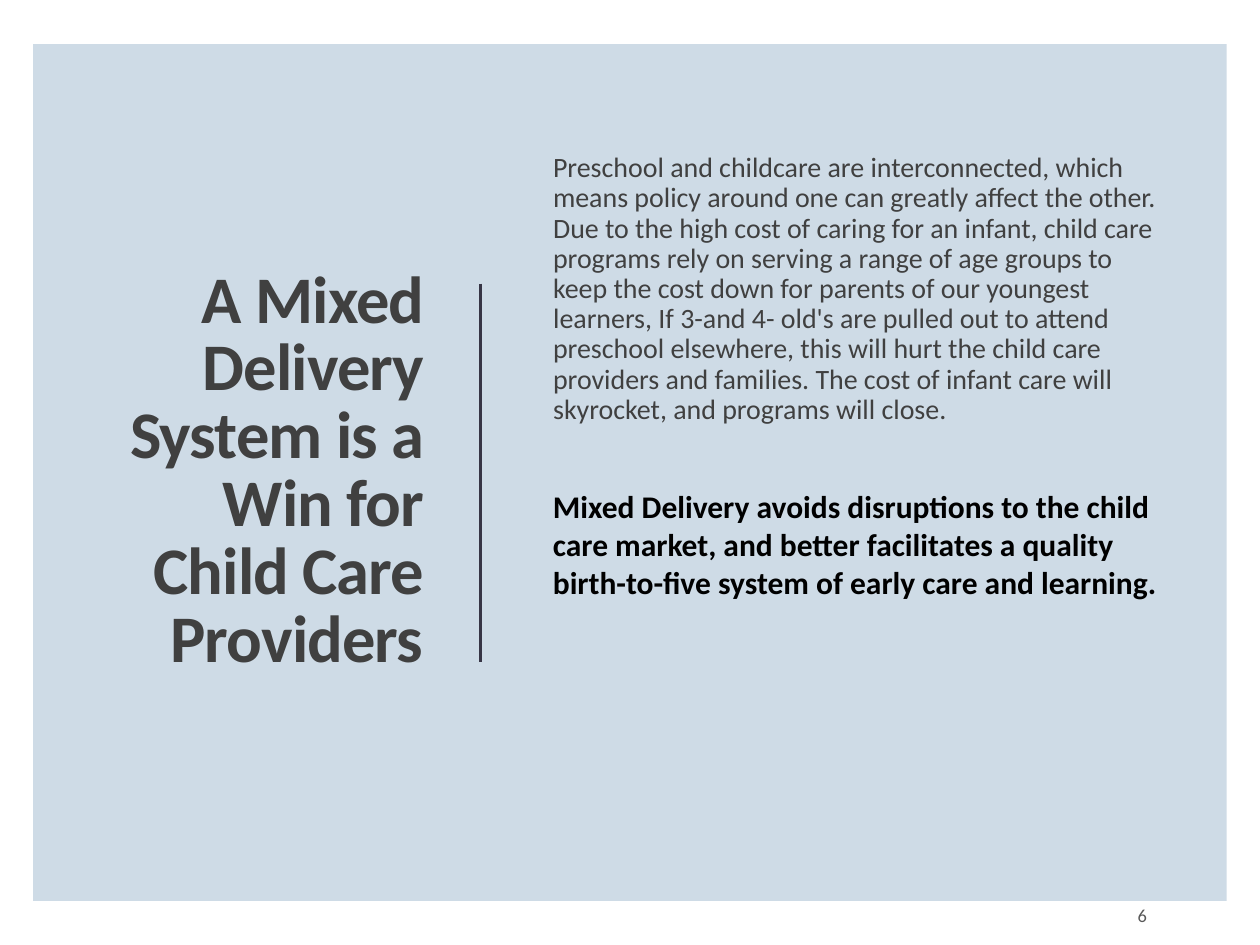
from lxml import etree
from pptx import Presentation
from pptx.dml.color import RGBColor
from pptx.enum.shapes import MSO_CONNECTOR, MSO_SHAPE
from pptx.enum.text import MSO_ANCHOR, PP_ALIGN
from pptx.oxml.ns import qn
from pptx.util import Pt

RECTANGLE = MSO_SHAPE.RECTANGLE
STRAIGHT = MSO_CONNECTOR.STRAIGHT
TOP, MIDDLE = MSO_ANCHOR.TOP, MSO_ANCHOR.MIDDLE
LEFT, RIGHT = PP_ALIGN.LEFT, PP_ALIGN.RIGHT
FONT = "Calibri"
COLORS = {
    "panel": "CEDBE6",
    "divider": "373545",
    "text": "404040",
    "number": "595959",
    "emphasis": "000000",
}

presentation = Presentation()
presentation.slide_width, presentation.slide_height = Pt(720), Pt(540)
slide = presentation.slides.add_slide(presentation.slide_layouts[6])


def add_text(text, box, size, color, bold=False, align=LEFT, anchor=TOP,
             line_spacing=1.0, space_after=0, side_inset=7.2, tracking=None):
    frame = slide.shapes.add_textbox(*map(Pt, box)).text_frame
    frame.word_wrap = True
    frame.vertical_anchor = anchor
    frame.margin_left = frame.margin_right = Pt(side_inset)
    paragraph = frame.paragraphs[0]
    paragraph.alignment = align
    paragraph.line_spacing = line_spacing
    paragraph.space_after = Pt(space_after)
    run = paragraph.add_run()
    run.text = text
    run.font.name = FONT
    run.font.size = Pt(size)
    run.font.bold = bold
    run.font.color.rgb = RGBColor.from_string(COLORS[color])
    if tracking is not None:
        run.font._element.set("spc", str(int(tracking * 100)))
    return paragraph


panel = slide.shapes.add_shape(RECTANGLE, Pt(18.9), Pt(25.2), Pt(682), Pt(489.6))
panel.shadow.inherit = False
panel.fill.solid()
panel.fill.fore_color.rgb = RGBColor.from_string(COLORS["panel"])
panel.line.fill.background()

add_text("A Mixed Delivery System is a Win for Child Care Providers",
         (56.9, 75.6, 192.2, 388.8), 38, "text", bold=True, align=RIGHT,
         anchor=MIDDLE, line_spacing=0.85, tracking=-0.5)

divider = slide.shapes.add_connector(STRAIGHT, Pt(274.5), Pt(162), Pt(274.5), Pt(378))
divider.line.color.rgb = RGBColor.from_string(COLORS["divider"])
divider.line.width = Pt(1.5)
etree.SubElement(divider._element.spPr, qn("a:effectLst"))

explanation = add_text(
    "Preschool and childcare are interconnected, which means policy around one can "
    "greatly affect the other. Due to the high cost of caring for an infant, child care "
    "programs rely on serving a range of age groups to keep the cost down for parents of "
    "our youngest learners, If 3-and 4- old's are pulled out to attend preschool "
    "elsewhere, this will hurt the child care providers and families. The cost of infant "
    "care will skyrocket, and programs will close.",
    (308.9, 84.2, 357.1, 182.9), 16, "text", line_spacing=0.9, space_after=2,
    side_inset=0)
explanation._p.get_or_add_pPr().set("marL", str(Pt(7.2)))

add_text("6", (584.6, 508.3, 77.8, 28.8), 10.5, "number", align=RIGHT,
         anchor=MIDDLE, space_after=6)

add_text("Mixed Delivery avoids disruptions to the child care market, and better "
         "facilitates a quality birth-to-five system of early care and learning.",
         (308.9, 275, 362.2, 72.7), 18, "emphasis", bold=True)

presentation.save("out.pptx")
